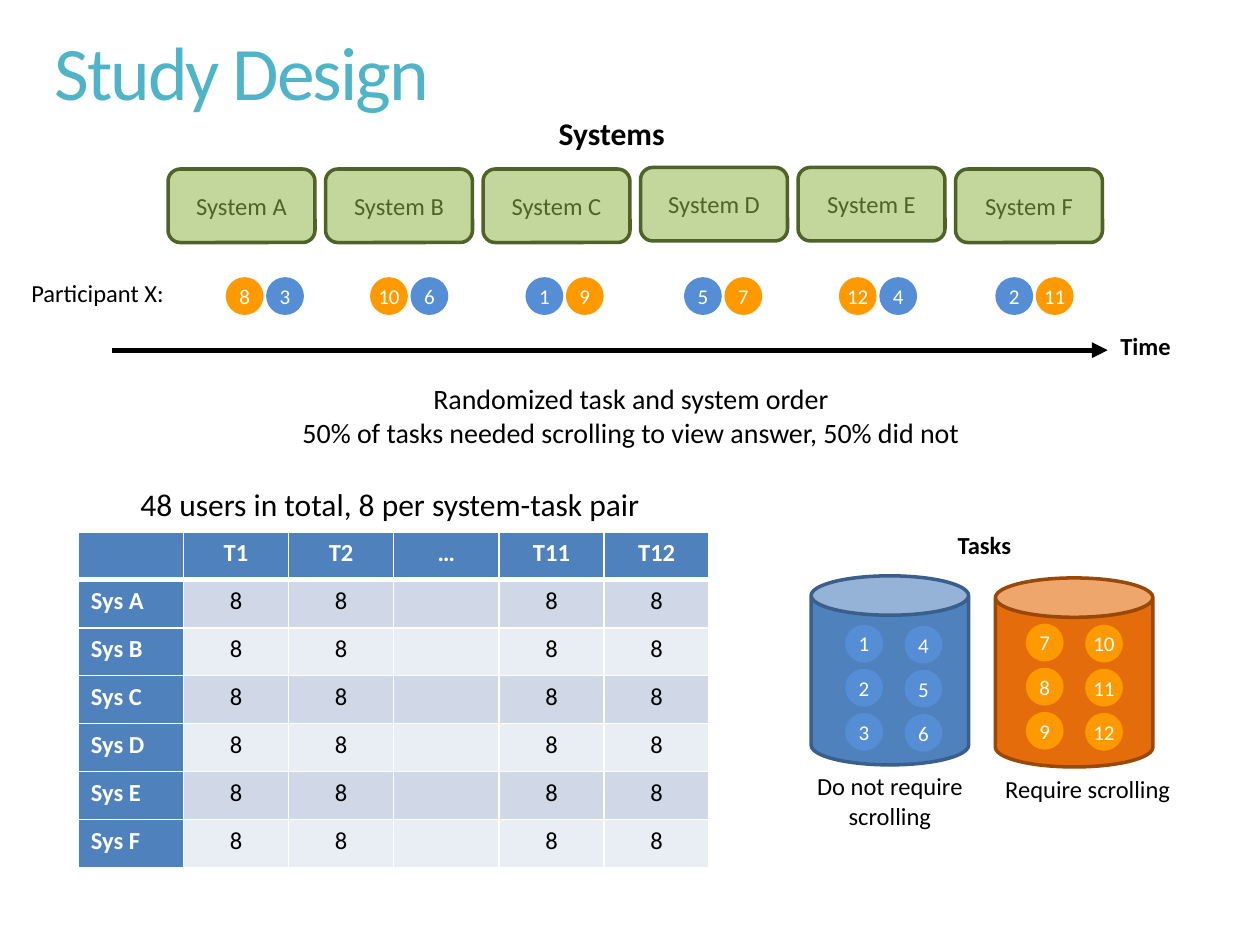
from collections import namedtuple

from lxml.etree import SubElement
from pptx import Presentation
from pptx.dml.color import RGBColor
from pptx.enum.shapes import MSO_CONNECTOR, MSO_SHAPE
from pptx.enum.text import MSO_ANCHOR, PP_ALIGN
from pptx.oxml.ns import qn
from pptx.util import Inches, Pt

# The slide is a grid of 120 columns by 90 rows, each 1/12 inch
Box = namedtuple("Box", "left top width height")
FONT = "Calibri"
BLACK, WHITE = "000000", "FFFFFF"
BLUE, LIGHT_BLUE, ORANGE = "4F81BD", "558ED5", "FF9900"
GREEN, DARK_GREEN = "C3D69B", "4F6228"
CHIP = 3.6


def grid(*units):
    return [Inches(unit / 12) for unit in units]


def inside(box, left, top, width, height):
    return Box(box.left + left, box.top + top, width, height)


def colour(value):
    return RGBColor.from_string(value)


def write(paragraph, words, size, shade=BLACK, bold=False, align=PP_ALIGN.CENTER):
    paragraph.alignment = align
    run = paragraph.add_run()
    run.text = words
    run.font.name = FONT
    run.font.size = Pt(size)
    run.font.bold = bold
    run.font.color.rgb = colour(shade)
    return run


def add_label(slide, box, lines, size, bold=False, align=PP_ALIGN.CENTER):
    frame = slide.shapes.add_textbox(*grid(*box)).text_frame
    frame.word_wrap = True
    for index, line in enumerate(lines):
        paragraph = frame.add_paragraph() if index else frame.paragraphs[0]
        write(paragraph, line, size, bold=bold, align=align)


def add_figure(slide, preset, box, fill, outline=None):
    figure = slide.shapes.add_shape(preset, *grid(*box))
    figure.shadow.inherit = False
    figure.fill.solid()
    figure.fill.fore_color.rgb = colour(fill)
    if outline:
        figure.line.color.rgb = colour(outline)
        figure.line.width = Pt(2)
    else:
        figure.line.fill.background()
    return figure


def add_task_chip(slide, box, task):
    chip = add_figure(slide, MSO_SHAPE.OVAL, box, ORANGE if task > 6 else LIGHT_BLUE)
    frame = chip.text_frame
    frame.word_wrap = False
    frame.vertical_anchor = MSO_ANCHOR.MIDDLE
    write(frame.paragraphs[0], str(task), 12, WHITE)


def place_title(slide, box):
    title = slide.shapes.title
    title.left, title.top, title.width, title.height = grid(*box)
    title.text_frame.vertical_anchor = MSO_ANCHOR.MIDDLE
    paragraph = title.text_frame.paragraphs[0]
    paragraph.line_spacing = 0.9
    run = write(paragraph, "Study Design", 43.2, "50B4C8", align=PP_ALIGN.LEFT)
    run.font._element.set("spc", "-120")


def place_systems(slide, box):
    add_label(slide, inside(box, 32.25, 0, 20, 4.8), ["Systems"], 18, bold=True)
    for index, name in enumerate("ABCDEF"):
        top = 5.65 if name in "DE" else 5.8
        system = add_figure(slide, MSO_SHAPE.ROUNDED_RECTANGLE,
                            inside(box, index * 15, top, 14, 7), GREEN, DARK_GREEN)
        system.text_frame.vertical_anchor = MSO_ANCHOR.MIDDLE
        write(system.text_frame.paragraphs[0], f"System {name}", 14, DARK_GREEN)


def place_timeline(slide, box):
    add_label(slide, inside(box, 1.8, 0, 18.7, 4), ["Participant X:"], 14,
              align=PP_ALIGN.LEFT)
    # One pair of tasks under each system
    pairs = {21.5: (8, 3), 35.25: (10, 6), 50.05: (1, 9),
             65.15: (5, 7), 79.9: (12, 4), 94.8: (2, 11)}
    for left, pair in pairs.items():
        for place, task in enumerate(pair):
            add_task_chip(slide, inside(box, left + place * 3.85, 0.5, CHIP, CHIP), task)
    # Time arrow
    start = inside(box, 10.7, 7.45, 94.8, 0)
    arrow = slide.shapes.add_connector(
        MSO_CONNECTOR.STRAIGHT,
        *grid(start.left, start.top, start.left + start.width, start.top))
    arrow.line.color.rgb = colour(BLACK)
    arrow.line.width = Pt(3)
    SubElement(arrow.line._get_or_add_ln(), qn("a:tailEnd"), type="triangle")
    SubElement(arrow._element.spPr, qn("a:effectLst"))
    add_label(slide, inside(box, 99.1, 5, 20, 4), ["Time"], 14, bold=True)


def add_borders(cell, top, bottom):
    properties = cell._tc.get_or_add_tcPr()
    for index, (side, points) in enumerate(
            (("lnL", 1), ("lnR", 1), ("lnT", top), ("lnB", bottom))):
        border = properties.makeelement(qn(f"a:{side}"), {"w": str(Pt(points))})
        SubElement(SubElement(border, qn("a:solidFill")), qn("a:srgbClr"), val=WHITE)
        properties.insert(index, border)


def place_counts(slide, box):
    add_label(slide, inside(box, -3.65, -5.05, 66.7, 4.8),
              ["48 users in total, 8 per system-task pair"], 18)
    rows = [["", "T1", "T2", "…", "T11", "T12"]]
    rows += [[f"Sys {name}", "8", "8", "", "8", "8"] for name in "ABCDEF"]
    counts = slide.shapes.add_table(len(rows), len(rows[0]), *grid(*box)).table
    for r, row in enumerate(rows):
        for c, words in enumerate(row):
            cell = counts.cell(r, c)
            heading = r == 0 or c == 0
            band = "D0D8E8" if r % 2 else "E9EDF4"
            cell.fill.solid()
            cell.fill.fore_color.rgb = colour(BLUE if heading else band)
            add_borders(cell, 3 if r == 1 else 1, 3 if r == 0 else 1)
            paragraph = cell.text_frame.paragraphs[0]
            if words:
                write(paragraph, words, 14, WHITE if heading else BLACK, heading,
                      PP_ALIGN.CENTER if c or not r else PP_ALIGN.LEFT)
            else:
                SubElement(paragraph._p, qn("a:endParaRPr"), sz="1400")


def place_task_set(slide, box, fill, outline, first, chips_at, caption, caption_at):
    add_figure(slide, MSO_SHAPE.CAN, box, fill, outline)
    left, top = chips_at
    for index in range(6):
        column, row = divmod(index, 3)
        add_task_chip(slide, inside(box, left + column * 5.65,
                                    top + column * 0.1 + row * 4.2, CHIP, CHIP),
                      first + index)
    add_label(slide, inside(box, *caption_at, 20, 6.8), [caption], 14)


def place_tasks(slide, box):
    add_label(slide, inside(box, 6.5, 0, 20, 4), ["Tasks"], 14, bold=True)
    place_task_set(slide, inside(box, 0, 4.95, 15, 18), BLUE, "3A5F8C", 1,
                   (3.25, 4.65), "Do not require scrolling", (-2.5, 18))
    place_task_set(slide, inside(box, 17.55, 5.15, 15, 18), "E46C0A", "984807", 7,
                   (2.9, 4.35), "Require scrolling", (-1.2, 18.1))


def main():
    deck = Presentation()
    deck.slide_width, deck.slide_height = grid(120, 90)
    slide = deck.slides.add_slide(deck.slide_layouts[5])
    place_title(slide, Box(4, 2.4, 99, 9.7))
    place_systems(slide, Box(16, 10.3, 89, 13))
    place_timeline(slide, Box(0, 25.9, 120, 9))
    add_label(slide, Box(0.1, 35.75, 120, 7.7),
              ["Randomized task and system order",
               "50% of tasks needed scrolling to view answer, 50% did not"], 16)
    place_counts(slide, Box(7.45, 50.65, 60.1, 32))
    place_tasks(slide, Box(77.25, 49.9, 33, 30))
    deck.save("out.pptx")


if __name__ == "__main__":
    main()
